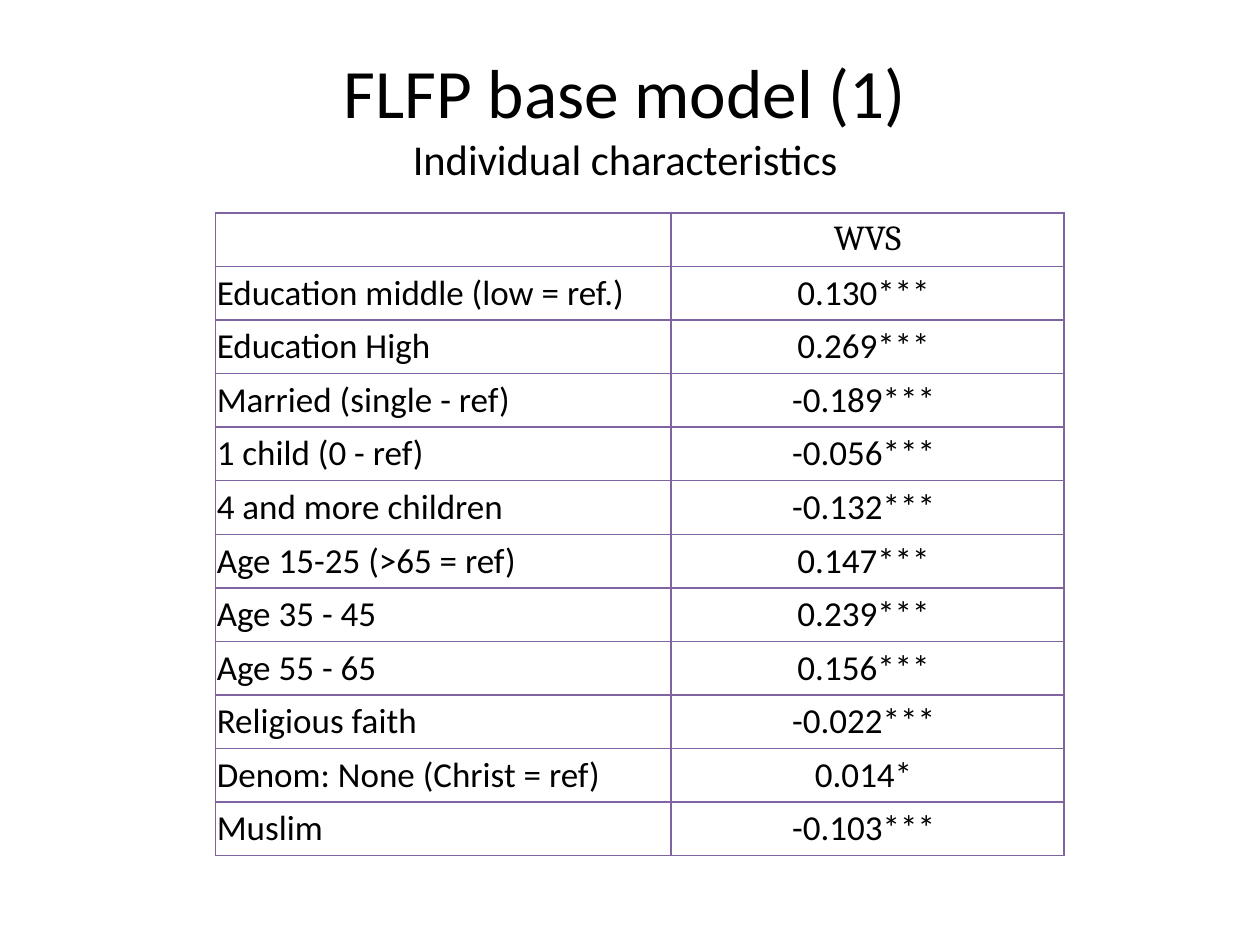
from dataclasses import dataclass

from lxml.etree import SubElement
from pptx import Presentation
from pptx.dml.color import RGBColor as RGB
from pptx.enum.text import MSO_ANCHOR as Anchor, PP_ALIGN as Align
from pptx.oxml.ns import qn
from pptx.util import Cm, Pt

TITLE = "FLFP base model (1)"
SUB = "Individual characteristics"
ROWS = [
    ("", "WVS"),
    ("Education middle (low = ref.)", "0.130*** "),
    ("Education High", "0.269*** "),
    ("Married (single - ref)", "-0.189*** "),
    ("1 child (0 - ref)", "-0.056*** "),
    ("4 and more children", "-0.132*** "),
    ("Age 15-25 (>65 = ref)", "0.147*** "),
    ("Age 35 - 45", "0.239*** "),
    ("Age 55 - 65", "0.156*** "),
    ("Religious faith", "-0.022*** "),
    ("Denom: None (Christ = ref)", "0.014* "),
    ("Muslim", "-0.103*** "),
]
COLS = (9.19, 7.92)
ROW_H = 1.08


@dataclass(frozen=True)
class Theme:
    font: str = "Calibri"
    head: str = "Cambria"
    ink: str = "000000"
    rule: str = "8064A2"
    title: float = 39.6
    sub: float = 24.3
    body: float = 20


theme = Theme()


def style(font, size, name=theme.font):
    font.name, font.size = name, Pt(size)
    font.color.rgb = RGB.from_string(theme.ink)


def border(cell):
    """Rule all four sides; the lines must precede the fill in tcPr."""
    props = cell._tc.get_or_add_tcPr()
    for side in ("a:lnL", "a:lnR", "a:lnT", "a:lnB"):
        line = SubElement(props, qn(side), w=str(Pt(1)))
        fill = SubElement(line, qn("a:solidFill"))
        SubElement(fill, qn("a:srgbClr"), val=theme.rule)


def add_title(slide):
    box = slide.shapes.add_textbox(Cm(1.17), Cm(0.76), Cm(22.86), Cm(3.18))
    frame = box.text_frame
    frame.word_wrap = True
    frame.vertical_anchor = Anchor.MIDDLE
    frame.text = f"{TITLE}\v{SUB}"
    para = frame.paragraphs[0]
    para.alignment = Align.CENTER
    for run, size in zip(para.runs, (theme.title, theme.sub)):
        style(run.font, size)


def fill_cell(cell, text, row, col):
    cell.margin_left = cell.margin_right = Cm(0.03)
    cell.margin_top = cell.margin_bottom = Cm(0.03)
    cell.vertical_anchor = Anchor.MIDDLE
    border(cell)
    cell.fill.background()
    cell.text_frame.text = text
    para = cell.text_frame.paragraphs[0]
    para.alignment = Align.CENTER if col else Align.LEFT
    for run in para.runs:
        style(run.font, theme.body, theme.font if row else theme.head)


def add_grid(slide):
    frame = slide.shapes.add_table(
        len(ROWS), len(COLS), Cm(4.34), Cm(4.29),
        Cm(sum(COLS)), Cm(ROW_H * len(ROWS)))
    table = frame.table
    table.first_row = table.horz_banding = False
    for col, width in zip(table.columns, COLS):
        col.width = Cm(width)
    for i, texts in enumerate(ROWS):
        table.rows[i].height = Cm(ROW_H)
        for j, text in enumerate(texts):
            fill_cell(table.cell(i, j), text, i, j)


def main():
    deck = Presentation()
    deck.slide_width, deck.slide_height = Cm(25.4), Cm(19.05)
    slide = deck.slides.add_slide(deck.slide_layouts[6])
    add_title(slide)
    add_grid(slide)
    deck.save("out.pptx")


if __name__ == "__main__":
    main()
